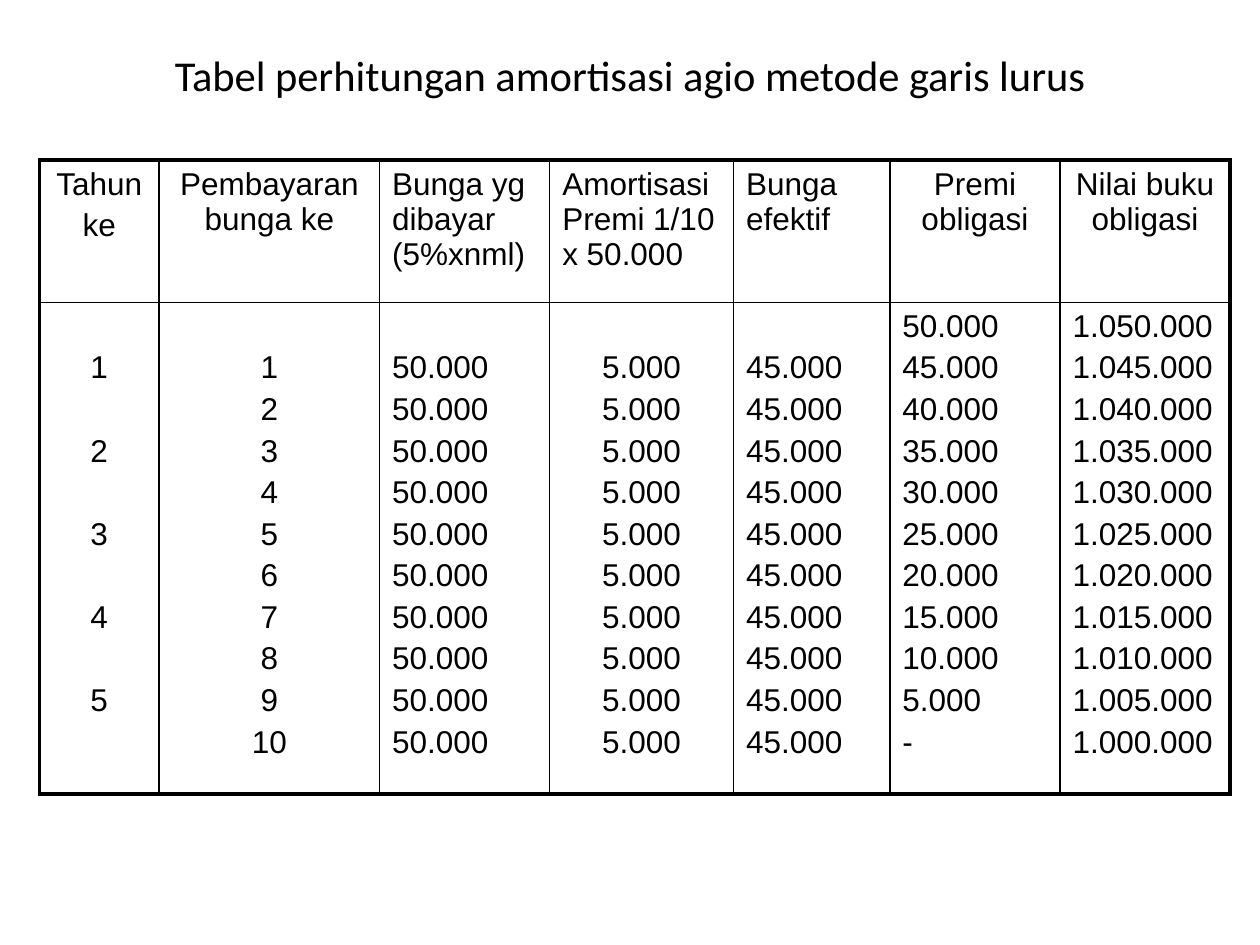
import pptx
import pptx.util
import pptx.dml.color
import pptx.enum.text
import pptx.oxml
import pptx.oxml.ns

Pt = pptx.util.Pt
BLACK = pptx.dml.color.RGBColor(0, 0, 0)
ALIGN = pptx.enum.text.PP_ALIGN
ANCHOR = pptx.enum.text.MSO_ANCHOR

LINE_GAP = 3.6
LINE_PITCH = 23.77
CELL_INSET = 3.6
OUTER_BORDER = 2.25
INNER_BORDER = 1
HEADER_HEIGHT, BODY_HEIGHT = 81.4, 264.6
PAYMENTS = range(1, 11)


def thousands(amount):
    return f"{amount:,}".replace(",", ".") if amount else "-"


PREMIUMS = [50000 - 5000 * n for n in range(11)]

COLUMNS = [
    dict(width=68.4, header=["Tahun", "ke"], header_align=ALIGN.CENTER,
         body=[str(year) for year in range(1, 6)], body_align=ALIGN.CENTER,
         skipped=1, step=2),
    dict(width=126, header=["Pembayaran bunga ke"], header_align=ALIGN.CENTER,
         body=[str(n) for n in PAYMENTS], body_align=ALIGN.CENTER,
         skipped=1, step=1),
    dict(width=97.2, header=["Bunga yg dibayar (5%xnml)"], header_align=ALIGN.LEFT,
         body=[thousands(50000) for n in PAYMENTS], body_align=ALIGN.LEFT,
         skipped=1, step=1),
    dict(width=105.1, header=["Amortisasi Premi 1/10 x 50.000"], header_align=ALIGN.LEFT,
         body=[thousands(5000) for n in PAYMENTS], body_align=ALIGN.CENTER,
         skipped=1, step=1),
    dict(width=89.3, header=["Bunga efektif"], header_align=ALIGN.LEFT,
         body=[thousands(45000) for n in PAYMENTS], body_align=ALIGN.LEFT,
         skipped=1, step=1),
    dict(width=97.2, header=["Premi obligasi"], header_align=ALIGN.CENTER,
         body=[thousands(premium) for premium in PREMIUMS], body_align=ALIGN.LEFT,
         skipped=0, step=1),
    dict(width=97.2, header=["Nilai buku obligasi"], header_align=ALIGN.CENTER,
         body=[thousands(1000000 + premium) for premium in PREMIUMS],
         body_align=ALIGN.LEFT, skipped=0, step=1),
]


def apply_format(target, values):
    for attribute, value in values.items():
        setattr(target, attribute, value)


def write_line(paragraph, text, paragraph_format, font_format):
    apply_format(paragraph, paragraph_format)
    run = paragraph.add_run()
    run.text = text
    apply_format(run.font, font_format)
    run.font.color.rgb = BLACK


def draw_borders(cell, widths):
    properties = cell._tc.get_or_add_tcPr()
    for side, width in widths.items():
        properties.append(pptx.oxml.parse_xml(
            f'<a:ln{side} {pptx.oxml.ns.nsdecls("a")} w="{Pt(width)}">'
            f'<a:solidFill><a:srgbClr val="{BLACK}"/></a:solidFill></a:ln{side}>'))


def fill_cell(cell, lines, align, skipped=0, step=1):
    apply_format(cell, {
        "margin_left": Pt(7.2), "margin_right": Pt(7.2),
        "margin_top": Pt(CELL_INSET + skipped * LINE_PITCH),
        "margin_bottom": Pt(CELL_INSET),
        "vertical_anchor": ANCHOR.TOP})
    gap = LINE_GAP + (step - 1) * LINE_PITCH
    for index, line in enumerate(lines):
        frame = cell.text_frame
        paragraph = frame.add_paragraph() if index else frame.paragraphs[0]
        write_line(paragraph, line,
                   {"alignment": align, "space_before": Pt(gap if index else LINE_GAP)},
                   {"name": "Arial", "size": Pt(18)})


def add_title(slide, left, top, width, height):
    title = slide.shapes.add_textbox(Pt(left), Pt(top), Pt(width), Pt(height))
    apply_format(title.text_frame, {
        "word_wrap": True, "vertical_anchor": ANCHOR.TOP,
        "margin_top": 0, "margin_bottom": 0})
    write_line(title.text_frame.paragraphs[0],
               "Tabel perhitungan amortisasi agio metode garis lurus",
               {"alignment": ALIGN.CENTER}, {"name": "Calibri", "size": Pt(24.3)})


def add_amortization(slide, left, top, width, height):
    amortization = slide.shapes.add_table(
        2, len(COLUMNS), Pt(left), Pt(top), Pt(width), Pt(height)).table
    apply_format(amortization, {"first_row": False, "horz_banding": False})
    amortization.rows[0].height = Pt(HEADER_HEIGHT)
    amortization.rows[1].height = Pt(BODY_HEIGHT)
    last = len(COLUMNS) - 1
    for index, column in enumerate(COLUMNS):
        amortization.columns[index].width = Pt(column["width"])
        header, body = amortization.cell(0, index), amortization.cell(1, index)
        fill_cell(header, column["header"], column["header_align"])
        fill_cell(body, column["body"], column["body_align"],
                  column["skipped"], column["step"])
        for cell in (header, body):
            draw_borders(cell, {
                "L": OUTER_BORDER if index == 0 else INNER_BORDER,
                "R": OUTER_BORDER if index == last else INNER_BORDER,
                "T": OUTER_BORDER if cell is header else INNER_BORDER,
                "B": OUTER_BORDER if cell is body else INNER_BORDER})
            cell.fill.background()


def main():
    presentation = pptx.Presentation()
    apply_format(presentation, {"slide_width": Pt(720), "slide_height": Pt(540)})
    slide = presentation.slides.add_slide(presentation.slide_layouts[6])
    add_title(slide, 36, 28, 648, 45.4)
    add_amortization(slide, 22.5, 91.5, sum(column["width"] for column in COLUMNS),
                     HEADER_HEIGHT + BODY_HEIGHT)
    presentation.save("out.pptx")


if __name__ == "__main__":
    main()
